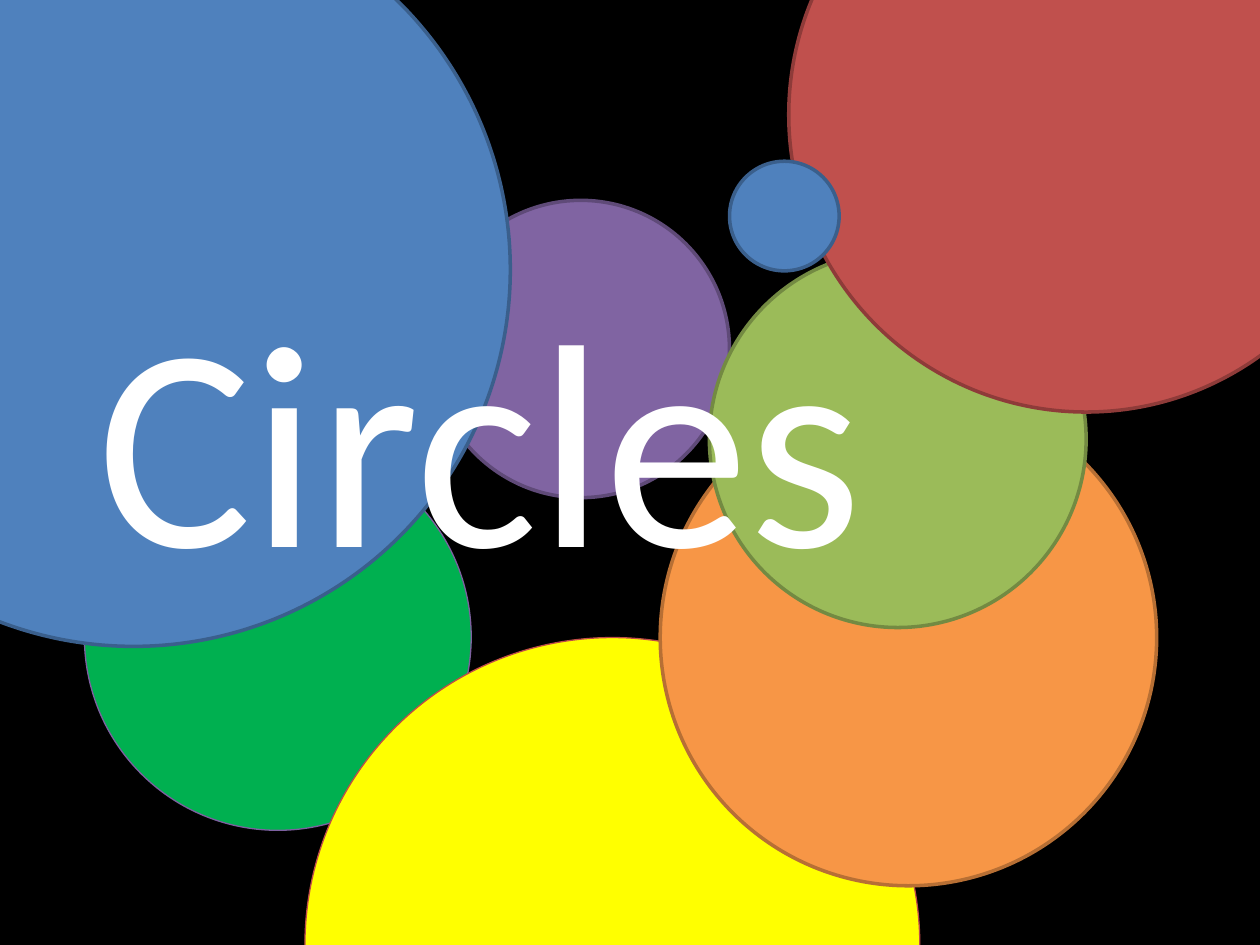
from typing import NamedTuple

from pptx import Presentation
from pptx.dml.color import RGBColor
from pptx.enum.shapes import MSO_SHAPE
from pptx.enum.text import MSO_ANCHOR, MSO_AUTO_SIZE, PP_ALIGN
from pptx.slide import Slide
from pptx.util import Inches, Pt

OVAL = MSO_SHAPE.OVAL
TOP = MSO_ANCHOR.TOP
GROW = MSO_AUTO_SIZE.SHAPE_TO_FIT_TEXT
LEFT = PP_ALIGN.LEFT
TITLE_ONLY = 5

COLORS = {
    "black": "000000",
    "white": "FFFFFF",
    "purple": "8064A2",
    "purple edge": "5F4A78",
    "green": "00B050",
    "green edge": "7D60A0",
    "yellow": "FFFF00",
    "yellow edge": "BF4C48",
    "orange": "F79646",
    "orange edge": "B76F34",
    "olive": "9BBB59",
    "olive edge": "738A42",
    "red": "C0504D",
    "red edge": "8E3B39",
    "blue": "4F81BD",
    "blue edge": "3A5F8C",
}


class Circle(NamedTuple):
    left: float
    top: float
    diameter: float
    color: str
    line_width: float = 2


# Back to front
CIRCLES = [
    Circle(3.43, 1.59, 2.36, "purple"),
    Circle(0.67, 3.52, 3.07, "green", 0.75),
    Circle(2.42, 5.06, 4.88, "yellow", 0.75),
    Circle(5.24, 3.09, 3.94, "orange"),
    Circle(5.63, 1.99, 2.99, "olive"),
    Circle(6.26, -1.45, 4.72, "red"),
    Circle(-1.93, -0.85, 5.98, "blue"),
    Circle(5.79, 1.28, 0.87, "blue"),
]


def color(name: str) -> RGBColor:
    return RGBColor.from_string(COLORS[name])


def draw_circle(slide: Slide, circle: Circle) -> None:
    diameter = Inches(circle.diameter)
    shape = slide.shapes.add_shape(
        OVAL, Inches(circle.left), Inches(circle.top), diameter, diameter
    )
    shape.shadow.inherit = False
    shape.fill.solid()
    shape.fill.fore_color.rgb = color(circle.color)
    shape.line.color.rgb = color(f"{circle.color} edge")
    shape.line.width = Pt(circle.line_width)


def place_title(slide: Slide, text: str) -> None:
    """Set the title in front of everything drawn so far."""
    title = slide.shapes.title
    title.left, title.top = Inches(0.67), Inches(1.99)
    title.width, title.height = Inches(6.63), Inches(2.89)
    slide.shapes.element.append(title.element)

    text_frame = title.text_frame
    text_frame.text = text
    text_frame.word_wrap = False
    text_frame.auto_size = GROW
    text_frame.vertical_anchor = TOP
    paragraph = text_frame.paragraphs[0]
    paragraph.alignment = LEFT
    font = paragraph.runs[0].font
    font.name = "Calibri"
    font.size = Pt(166)
    font.color.rgb = color("white")


def main() -> None:
    presentation = Presentation()
    presentation.slide_width = Inches(10)
    presentation.slide_height = Inches(7.5)
    slide = presentation.slides.add_slide(presentation.slide_layouts[TITLE_ONLY])
    slide.background.fill.solid()
    slide.background.fill.fore_color.rgb = color("black")

    for circle in CIRCLES:
        draw_circle(slide, circle)
    place_title(slide, "Circles")
    presentation.save("out.pptx")


if __name__ == "__main__":
    main()
